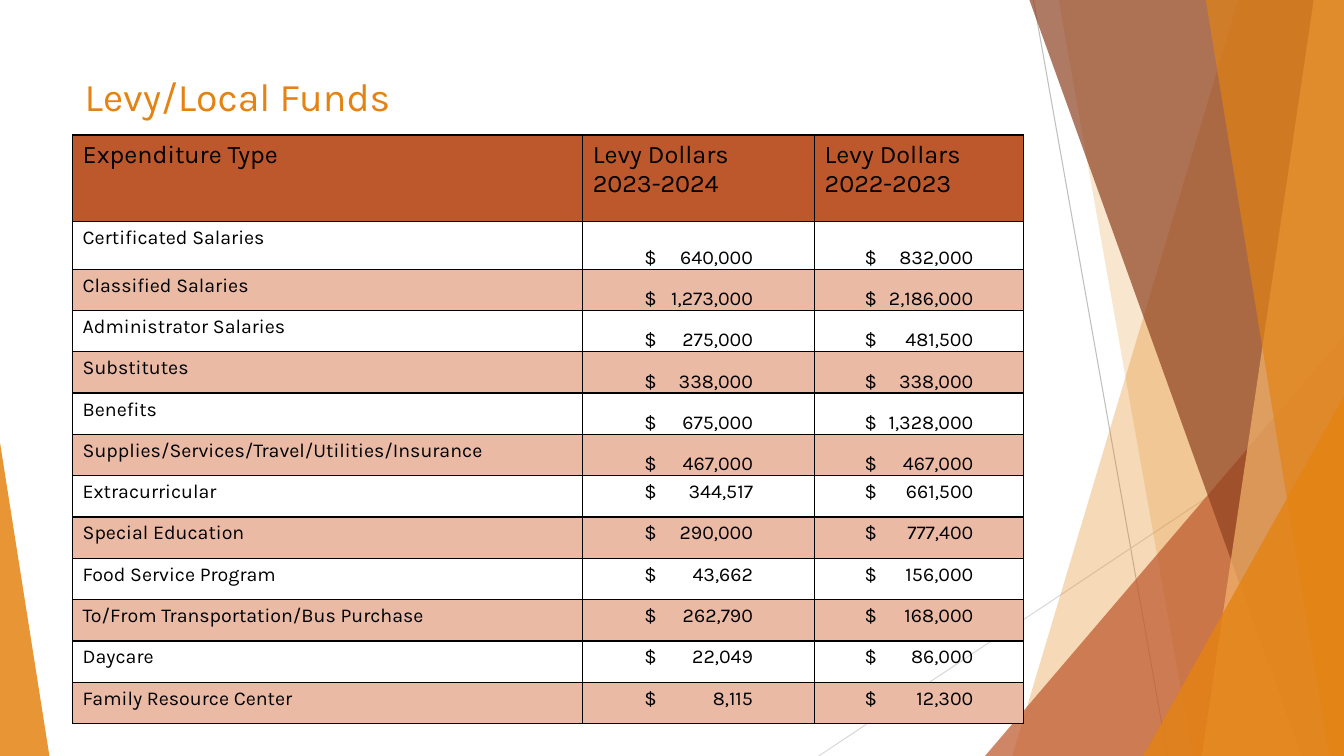
from lxml import etree
from pptx import Presentation
from pptx.dml.color import RGBColor
from pptx.enum.shapes import MSO_CONNECTOR, MSO_SHAPE
from pptx.enum.text import MSO_ANCHOR, PP_ALIGN
from pptx.oxml.ns import qn
from pptx.util import Inches, Pt

STRAIGHT = MSO_CONNECTOR.STRAIGHT
TRIANGLE = MSO_SHAPE.ISOSCELES_TRIANGLE
TOP, MIDDLE, BOTTOM = MSO_ANCHOR.TOP, MSO_ANCHOR.MIDDLE, MSO_ANCHOR.BOTTOM
LEFT = PP_ALIGN.LEFT

ORANGE = RGBColor(0xE4, 0x83, 0x12)
RUST = RGBColor(0xBD, 0x58, 0x2C)
BROWN = RGBColor(0x8E, 0x42, 0x21)
APRICOT = RGBColor(0xF3, 0xB5, 0x6C)
BAND = RGBColor(0xEA, 0xBA, 0xA5)
GRAY = RGBColor(0xBF, 0xBF, 0xBF)
PALE_GRAY = RGBColor(0xD9, 0xD9, 0xD9)
BLACK = RGBColor(0, 0, 0)

FONT = "Karla"
WIDTH, HEIGHT = 13.33, 7.5

TITLE = "Levy/Local Funds"
HEADER = ("Expenditure Type", "Levy Dollars\n2023-2024", "Levy Dollars\n2022-2023")
EXPENDITURES = [
    ("Certificated Salaries", "640,000", "832,000"),
    ("Classified Salaries", "1,273,000", "2,186,000"),
    ("Administrator Salaries", "275,000", "481,500"),
    ("Substitutes", "338,000", "338,000"),
    ("Benefits", "675,000", "1,328,000"),
    ("Supplies/Services/Travel/Utilities/Insurance", "467,000", "467,000"),
    ("Extracurricular", "344,517", "661,500"),
    ("Special Education", "290,000", "777,400"),
    ("Food Service Program", "43,662", "156,000"),
    ("To/From Transportation/Bus Purchase", "262,790", "168,000"),
    ("Daycare", "22,049", "86,000"),
    ("Family Resource Center", "8,115", "12,300"),
]
BOTTOM_ROWS = 6
COL_WIDTHS = (5.06, 2.3, 2.07)
ROW_HEIGHTS = [0.86, 0.47] + [0.41] * 11
AMOUNT_WIDTH = 1.08

LINES = [
    ((10.25, 0), (11.58, HEIGHT), GRAY),
    ((WIDTH, 4.03), (8.12, HEIGHT), PALE_GRAY),
]
FACETS = [
    ("panel", (12.28, 10.04), ORANGE, 30),
    ("panel", (10.5, 11.83), ORANGE, 20),
    ("triangle", (9.77, 3.33, 3.56, 1), RUST, 72),
    ("panel", (10.21, 12.91), BROWN, 70),
    ("panel", (13.03, 11.92), APRICOT, 70),
    ("panel", (11.96, 13.18), ORANGE, 65),
    ("triangle", (11.34, 3.93, 1.99, 1), ORANGE, 80),
    ("triangle", (0, 4.39, 0.49, 0), ORANGE, 85),
]


def add_line(shapes, start, end, color):
    line = shapes.add_connector(STRAIGHT, *map(Inches, start + end))
    line.line.color.rgb = color
    line.line.width = Pt(0.75)
    etree.SubElement(line._element.spPr, qn("a:effectLst"))


def add_facet(shapes, kind, geometry, color, opacity):
    if kind == "panel":
        top_x, bottom_x = geometry
        builder = shapes.build_freeform(Inches(top_x), 0)
        corners = [(WIDTH, 0), (WIDTH, HEIGHT), (bottom_x, HEIGHT)]
        builder.add_line_segments([(Inches(x), Inches(y)) for x, y in corners])
        sp = builder.convert_to_shape()
    else:
        x, y, w, peak = geometry
        sp = shapes.add_shape(TRIANGLE, *map(Inches, (x, y, w, HEIGHT - y)))
        sp.adjustments[0] = peak
    sp.shadow.inherit = False
    sp.fill.solid()
    sp.fill.fore_color.rgb = color
    sp.line.fill.background()
    rgb = sp._element.spPr.find(qn("a:solidFill")).find(qn("a:srgbClr"))
    etree.SubElement(rgb, qn("a:alpha"), val=str(opacity * 1000))


def format_text(tf, size, color):
    for p in tf.paragraphs:
        p.alignment = LEFT
        for r in p.runs:
            for name, value in {"name": FONT, "size": Pt(size), "bold": False}.items():
                setattr(r.font, name, value)
            r.font.color.rgb = color


def add_borders(cell):
    tcPr = cell._tc.get_or_add_tcPr()
    for i, side in enumerate(("a:lnL", "a:lnR", "a:lnT", "a:lnB")):
        ln = etree.Element(qn(side), w=str(Pt(1)))
        fill = etree.SubElement(ln, qn("a:solidFill"))
        etree.SubElement(fill, qn("a:srgbClr"), val=str(BLACK))
        tcPr.insert(i, ln)


def add_amount_tab(p):
    tabs = etree.SubElement(p._p.get_or_add_pPr(), qn("a:tabLst"))
    etree.SubElement(tabs, qn("a:tab"), pos=str(Inches(AMOUNT_WIDTH)), algn="r")


def fill_cell(cell, text, row, col):
    is_amount = row > 0 and col > 0
    at_bottom = is_amount and row <= BOTTOM_ROWS
    cell.text = f"$\t{text}" if is_amount else text
    format_text(cell.text_frame, 14 if row else 18, BLACK)
    side = (COL_WIDTHS[col] - AMOUNT_WIDTH) / 2 if is_amount else 0.1
    settings = {
        "margin_left": Inches(side),
        "margin_right": Inches(0.01 if is_amount else 0.1),
        "margin_top": Inches(0.01 if at_bottom else 0.05),
        "margin_bottom": Inches(0 if at_bottom else 0.05),
        "vertical_anchor": BOTTOM if at_bottom else TOP,
    }
    for name, value in settings.items():
        setattr(cell, name, value)
    if is_amount:
        add_amount_tab(cell.text_frame.paragraphs[0])
    if row % 2:
        cell.fill.background()
    else:
        cell.fill.solid()
        cell.fill.fore_color.rgb = BAND if row else RUST
    add_borders(cell)


def add_funds_table(shapes):
    rows = [HEADER] + EXPENDITURES
    box = (0.72, 1.34, sum(COL_WIDTHS), sum(ROW_HEIGHTS))
    table = shapes.add_table(len(rows), len(HEADER), *map(Inches, box)).table
    table.first_row = table.horz_banding = False
    for column, width in zip(table.columns, COL_WIDTHS):
        column.width = Inches(width)
    for table_row, height in zip(table.rows, ROW_HEIGHTS):
        table_row.height = Inches(height)
    for row, values in enumerate(rows):
        for col, text in enumerate(values):
            fill_cell(table.cell(row, col), text, row, col)


def main():
    prs = Presentation()
    prs.slide_width, prs.slide_height = Inches(WIDTH), Inches(HEIGHT)
    s = prs.slides.add_slide(prs.slide_layouts[5])
    for line in LINES:
        add_line(s.shapes, *line)
    for facet in FACETS:
        add_facet(s.shapes, *facet)

    title = s.shapes.title
    s.shapes._spTree.append(title._element)
    for name, value in zip(("left", "top", "width", "height"), (0.74, 0.67, 9.4, 0.56)):
        setattr(title, name, Inches(value))
    title.text_frame.text = TITLE
    title.text_frame.vertical_anchor = MIDDLE
    format_text(title.text_frame, 28, ORANGE)

    add_funds_table(s.shapes)
    prs.save("out.pptx")


if __name__ == "__main__":
    main()
